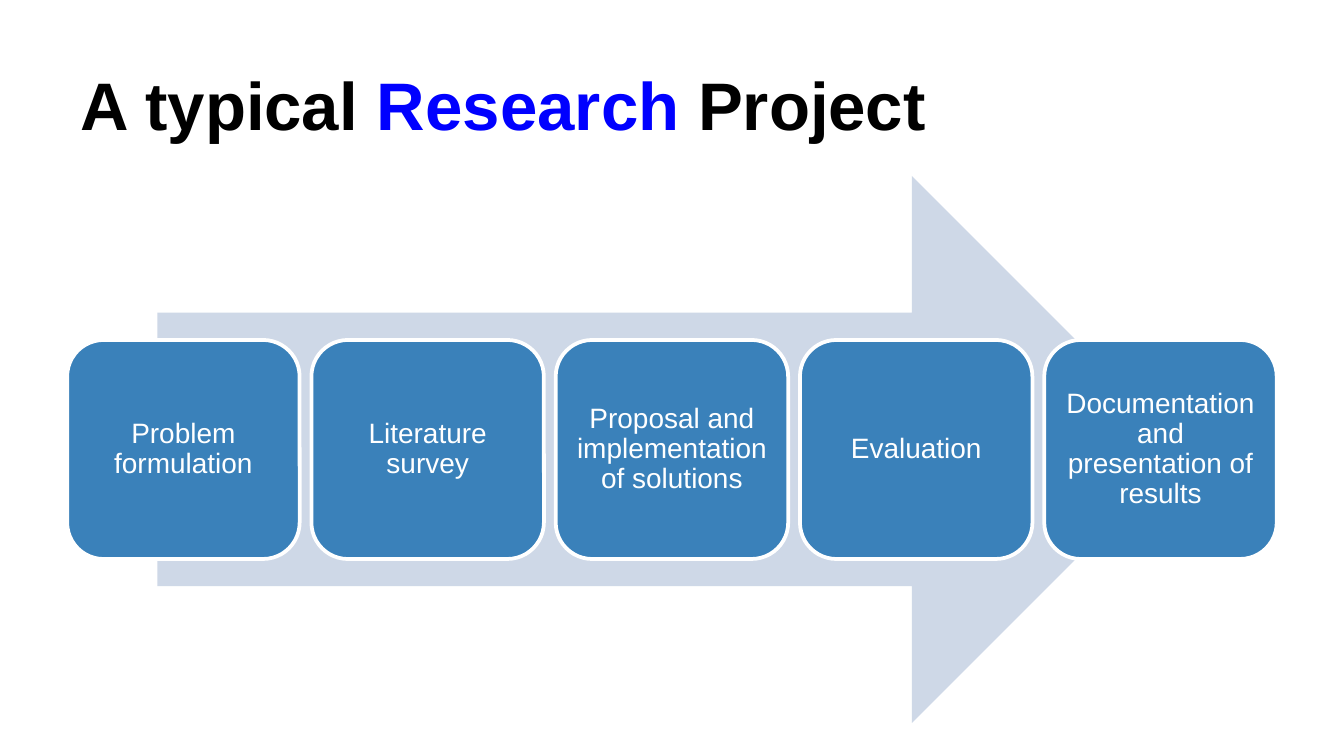
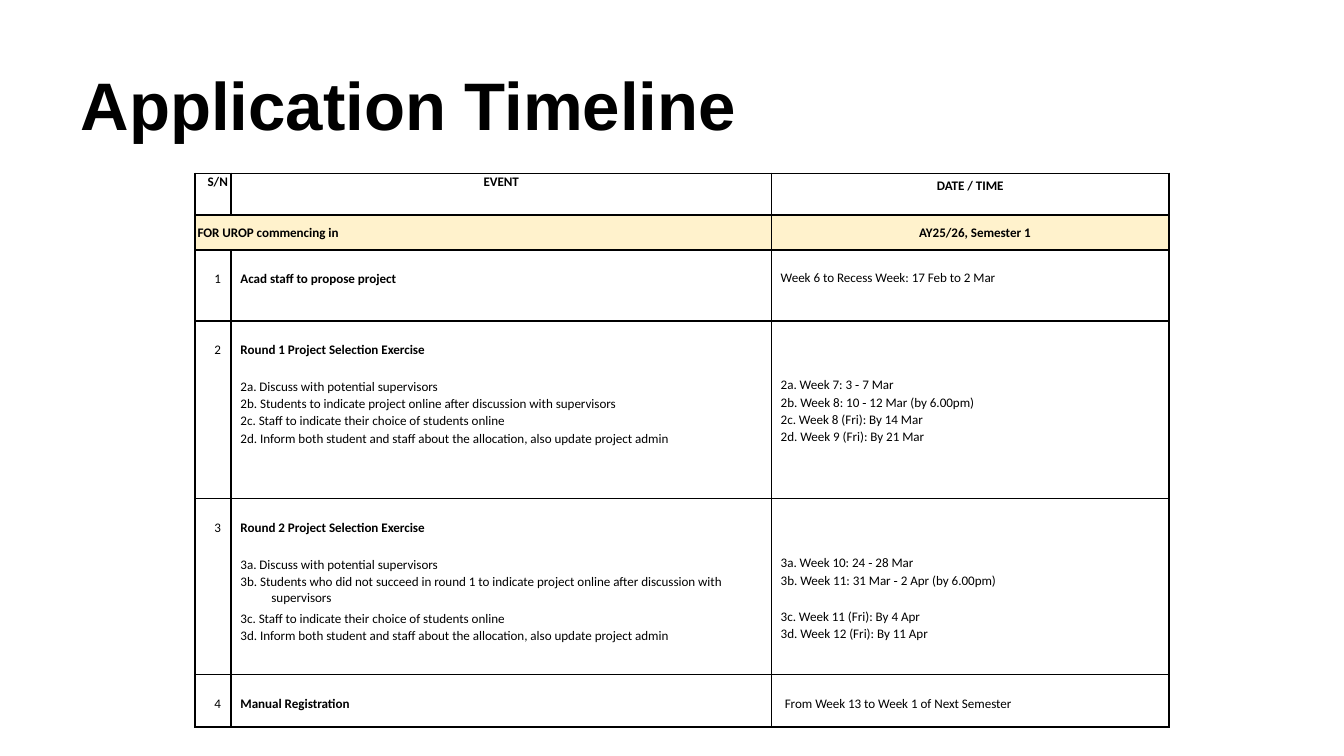
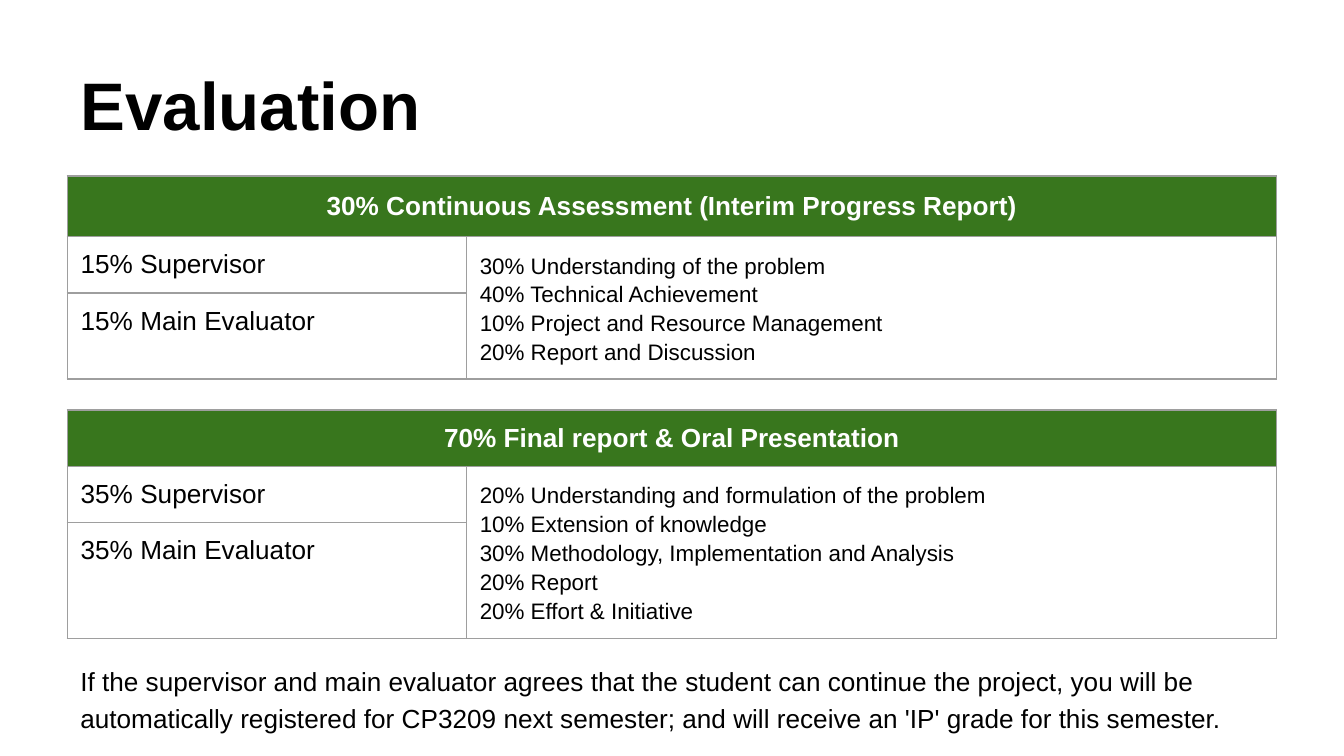
from lxml import etree
from pptx import Presentation
from pptx.dml.color import RGBColor
from pptx.enum.shapes import MSO_SHAPE
from pptx.enum.text import MSO_ANCHOR, MSO_AUTO_SIZE, PP_ALIGN
from pptx.oxml.ns import qn
from pptx.util import Inches, Pt

LEFT, CENTER = PP_ALIGN.LEFT, PP_ALIGN.CENTER
TOP, MIDDLE, BOTTOM = MSO_ANCHOR.TOP, MSO_ANCHOR.MIDDLE, MSO_ANCHOR.BOTTOM
NO_FIT = MSO_AUTO_SIZE.NONE
ARROW, ROUND = MSO_SHAPE.RIGHT_ARROW, MSO_SHAPE.ROUNDED_RECTANGLE

BLACK, WHITE, BLUE = "000000", "FFFFFF", "0000FF"
PALE, STEEL, CREAM = "CED8E7", "3A81BA", "FFF2CC"
GREEN, GRAY = "38761D", "9E9E9E"
EDGE, WIDE = 0.5, 9


def color(code):
    return RGBColor.from_string(code)


def box(*sides):
    return [Inches(side) for side in sides]


class Deck:
    def __init__(self):
        self.file = Presentation()
        # Widescreen, 16 to 9
        self.file.slide_width, self.file.slide_height = box(10, 10 * 9 / 16)
        self.page = None

    def slide(self, *parts):
        """Start a slide; its title is made of (text, colour) parts."""
        self.page = self.file.slides.add_slide(self.file.slide_layouts[5])
        title = self.page.shapes.title
        title.left, title.top, title.width, title.height = box(EDGE, 0.23, WIDE, 0.94)
        para = title.text_frame.paragraphs[0]
        for text, _ in parts:
            para.add_run().text = text
        self.style(title.text_frame, 36, bold=True, anchor=BOTTOM)
        for run, (_, tint) in zip(para.runs, parts):
            run.font.color.rgb = color(tint)

    def style(self, frame, size, tint=BLACK, bold=False, align=LEFT,
              anchor=TOP, inset=0.1, lead=1.0, font="Arial"):
        frame.word_wrap = True
        frame.auto_size = NO_FIT
        frame.vertical_anchor = anchor
        frame.margin_left = frame.margin_right = Inches(inset)
        frame.margin_top = frame.margin_bottom = Inches(inset)
        self.paint(frame, size, tint, bold, align, lead, font)

    def paint(self, frame, size, tint, bold, align, lead, font):
        for para in frame.paragraphs:
            para.alignment = align
            para.line_spacing = lead
            for run in para.runs:
                run.font.name, run.font.size = font, Pt(size)
                run.font.bold = bold
                run.font.color.rgb = color(tint)

    def shape(self, kind, place, fill, line=None):
        item = self.page.shapes.add_shape(kind, *box(*place))
        item.shadow.inherit = False
        item.fill.solid()
        item.fill.fore_color.rgb = color(fill)
        if line:
            item.line.color.rgb = color(line)
            item.line.width = Pt(2)
        else:
            item.line.fill.background()
        return item

    def text(self, place, text, size, **look):
        frame = self.page.shapes.add_textbox(*box(*place)).text_frame
        frame.text = text
        self.style(frame, size, **look)

    def table(self, left, top, cols, rows, line, weight):
        place = box(left, top, sum(cols), sum(rows))
        grid = self.page.shapes.add_table(len(rows), len(cols), *place).table
        grid.first_row = grid.horz_banding = False
        for col, width in zip(grid.columns, cols):
            col.width = Inches(width)
        for row, height in zip(grid.rows, rows):
            row.height = Inches(height)
        for cell in grid.iter_cells():
            cell.fill.background()
            self.border(cell, line, weight)
        return grid

    def border(self, cell, tint, weight):
        props = cell._tc.get_or_add_tcPr()
        for spot, side in enumerate(("lnL", "lnR", "lnT", "lnB")):
            edge = etree.Element(qn("a:" + side), w=str(Pt(weight)))
            fill = etree.SubElement(edge, qn("a:solidFill"))
            etree.SubElement(fill, qn("a:srgbClr"), val=tint)
            props.insert(spot, edge)

    def cell(self, cell, text, size, tint=BLACK, bold=False, align=LEFT, lead=1.0,
             font="Arial", inset=(0.1, 0.1, 0.1, 0.1), anchor=TOP, fill=None):
        cell.text_frame.text = text
        self.paint(cell.text_frame, size, tint, bold, align, lead, font)
        (cell.margin_left, cell.margin_top,
         cell.margin_right, cell.margin_bottom) = box(*inset)
        cell.vertical_anchor = anchor
        if fill:
            cell.fill.solid()
            cell.fill.fore_color.rgb = color(fill)
        return cell.text_frame.paragraphs


def project(deck):
    deck.slide(("A typical ", BLACK), ("Research", BLUE), (" Project", BLACK))
    deck.shape(ARROW, (1.17, 1.31, 7.65, 4.07), PALE)
    steps = ["Problem formulation", "Literature survey",
             "Proposal and implementation of solutions", "Evaluation",
             "Documentation and presentation of results"]
    width = 1.73
    pitch = (WIDE - width) / (len(steps) - 1)
    for num, step in enumerate(steps):
        left = EDGE + num * pitch
        deck.shape(ROUND, (left, 2.53, width, 1.63), STEEL, WHITE)
        deck.text((left + 0.08, 2.61, width - 0.16, 1.47), step, 15, tint=WHITE,
                  align=CENTER, anchor=MIDDLE, inset=0.06, lead=0.9)


def dates(deck):
    deck.slide(("Application Timeline", BLACK))
    grid = deck.table(1.45, 1.29, [0.27, 4.02, 2.96],
                      [0.31, 0.26, 0.53, 1.32, 1.31, 0.39], BLACK, 1)

    def put(row, col, text, left=0.07, top=0.0, **look):
        return deck.cell(grid.cell(row, col), text, 7, font="Calibri", lead=1.07,
                         inset=(left, top, 0, 0), **look)

    # Header and term rows
    put(0, 0, "S/N", bold=True, align=CENTER)
    put(0, 1, "EVENT", left=0, bold=True, align=CENTER)
    put(0, 2, "DATE / TIME", left=0, top=0.03, bold=True, align=CENTER)
    grid.cell(1, 0).merge(grid.cell(1, 1))
    band = {"bold": True, "anchor": MIDDLE, "fill": CREAM}
    put(1, 0, "FOR UROP commencing in", left=0.02, **band)
    put(1, 2, "AY25/26, Semester 1", align=CENTER, **band)

    # Event rows: heading, steps, dates, left and top inset of the dates
    share = "Inform both student and staff about the allocation, also update project admin"
    pick = "Staff to indicate their choice of students online"
    talk = "Discuss with potential supervisors"
    events = [
        ("Acad staff to propose project", [],
         ["Week 6 to Recess Week: 17 Feb to 2 Mar"], 0.07, 0.14),
        ("Round 1 Project Selection Exercise",
         [talk, "Students to indicate project online after discussion with supervisors",
          pick, share],
         ["2a. Week 7: 3 ‐ 7 Mar", "2b. Week 8: 10 ‐ 12 Mar (by 6.00pm)",
          "2c. Week 8 (Fri): By 14 Mar", "2d. Week 9 (Fri): By 21 Mar"], 0.07, 0.41),
        ("Round 2 Project Selection Exercise",
         [talk, "Students who did not succeed in round 1 to indicate project online "
                "after discussion with supervisors", pick, share],
         ["3a. Week 10: 24 ‐ 28 Mar", "3b. Week 11: 31 Mar ‐ 2 Apr (by 6.00pm)",
          "3c. Week 11 (Fri): By 4 Apr", "3d. Week 12 (Fri): By 11 Apr"], 0.07, 0.41),
        ("Manual Registration", [],
         ["From Week 13 to Week 1 of Next Semester"], 0.1, 0.15),
    ]
    for num, (head, steps, days, left, top) in enumerate(events, 1):
        row = num + 1
        put(row, 0, str(num), top=0.15, align=CENTER)
        items = [f"{num}{mark}. {step}" for mark, step in zip("abcd", steps)]
        paras = put(row, 1, "\n".join([head] + items), top=0.15)
        paras[0].runs[0].font.bold = True
        for para in paras[1:]:
            para.space_before = Pt(0.4)
            para.line_spacing = 1.03
            props = para._p.get_or_add_pPr()
            props.set("marL", str(Inches(0.23)))
            props.set("indent", str(-Inches(0.23)))
        if items:
            paras[1].space_before = Pt(11)
        dated = put(row, 2, "\n".join(days), left=left, top=top)
        if items:
            dated[1].space_before = Pt(0.5)
        if num == 3:
            paras[3].space_before = Pt(2.5)
            dated[2].space_before = Pt(10.5)


def grades(deck):
    deck.slide(("Evaluation", BLACK))
    tables = [
        (1.31, [0.45, 0.42, 0.64], "30% Continuous Assessment (Interim Progress Report)",
         "15%", ["30% Understanding of the problem", "40% Technical Achievement",
                 "10% Project and Resource Management", "20% Report and Discussion"]),
        (3.05, [0.42, 0.42, 0.86], "70% Final report & Oral Presentation",
         "35%", ["20% Understanding and formulation of the problem",
                 "10% Extension of knowledge",
                 "30% Methodology, Implementation and Analysis",
                 "20% Report", "20% Effort & Initiative"]),
    ]
    for top, rows, head, share, marks in tables:
        grid = deck.table(EDGE, top, [2.97, 6.03], rows, GRAY, 0.75)
        grid.cell(0, 0).merge(grid.cell(0, 1))
        grid.cell(1, 1).merge(grid.cell(2, 1))
        deck.cell(grid.cell(0, 0), head, 14, WHITE, True, CENTER,
                  anchor=MIDDLE, fill=GREEN)
        for row, judge in enumerate(("Supervisor", "Main Evaluator"), 1):
            deck.cell(grid.cell(row, 0), f"{share} {judge}", 14)
        deck.cell(grid.cell(1, 1), "\n".join(marks), 12, lead=1.15)
    deck.text((EDGE, 4.82, WIDE, 0.7),
              "If the supervisor and main evaluator agrees that the student can continue "
              "the project, you will be automatically registered for CP3209 next semester; "
              "and will receive an 'IP' grade for this semester.", 14, lead=1.15)


def main():
    deck = Deck()
    project(deck)
    dates(deck)
    grades(deck)
    deck.file.save("out.pptx")


if __name__ == "__main__":
    main()
